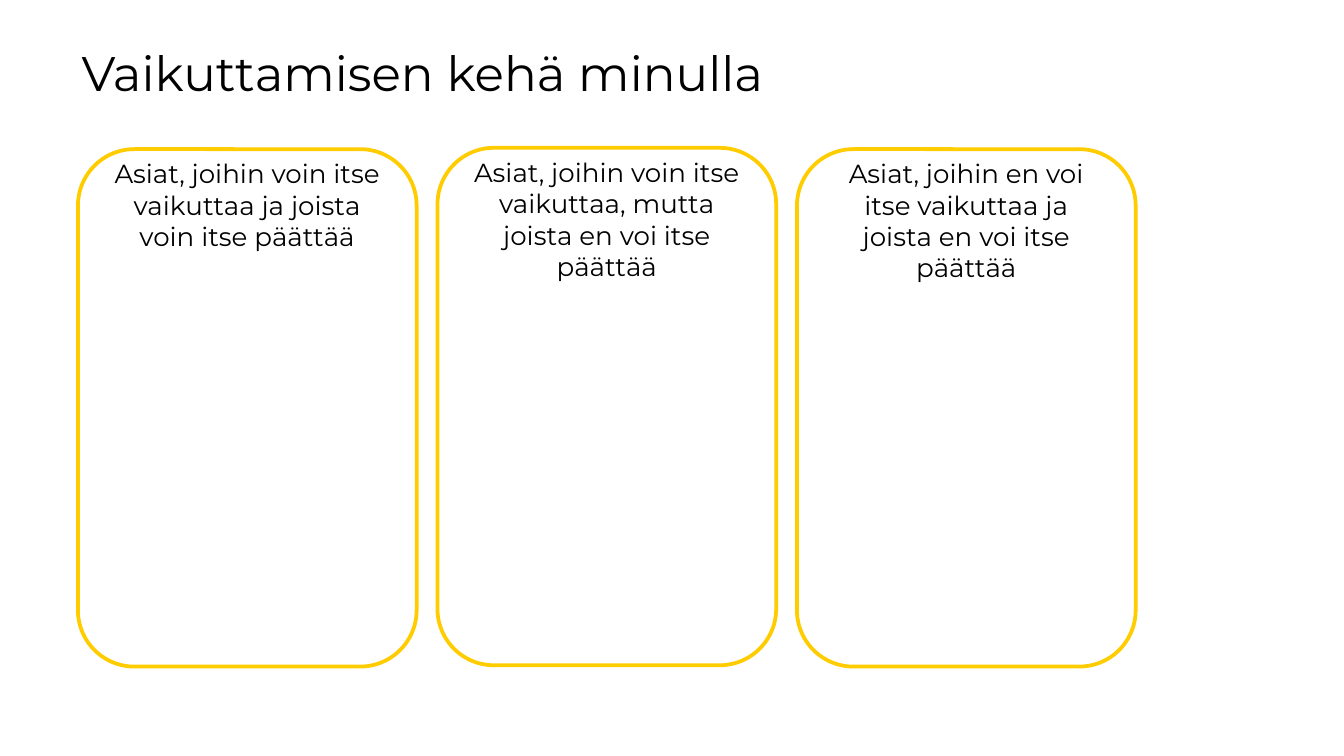
import pptx
import pptx.util
import pptx.dml.color
import pptx.enum.shapes
import pptx.enum.text

Inches = pptx.util.Inches
ALIGN = pptx.enum.text.PP_ALIGN
ANCHOR = pptx.enum.text.MSO_ANCHOR

BLACK = pptx.dml.color.RGBColor(0x00, 0x00, 0x00)
WHITE = pptx.dml.color.RGBColor(0xFF, 0xFF, 0xFF)
YELLOW = pptx.dml.color.RGBColor(0xFF, 0xCC, 0x00)

CARDS = [
    (1.11, "Asiat, joihin voin itse vaikuttaa ja joista voin itse päättää"),
    (1.1, "Asiat, joihin voin itse vaikuttaa, mutta joista en voi itse päättää"),
    (1.11, "Asiat, joihin en voi itse vaikuttaa ja joista en voi itse päättää"),
]
FIRST_LEFT, LAST_LEFT = 0.58, 5.93
CARD_STEP = (LAST_LEFT - FIRST_LEFT) / (len(CARDS) - 1)


def write_text(tf, text, *, size, align=ALIGN.LEFT, anchor=ANCHOR.TOP,
               top=0.1, bottom=0.1, font="Montserrat", color=BLACK):
    tf.word_wrap = True
    tf.vertical_anchor = anchor
    tf.margin_left = tf.margin_right = Inches(0.1)
    tf.margin_top = Inches(top)
    tf.margin_bottom = Inches(bottom)
    p = tf.paragraphs[0]
    p.alignment = align
    r = p.add_run()
    r.text = text
    r.font.name = font
    r.font.size = pptx.util.Pt(size)
    r.font.color.rgb = color


class SlideBuilder:
    title_size = 26
    card_size = 14
    line_width = 2

    def __init__(self, prs):
        self.s = prs.slides.add_slide(prs.slide_layouts[6])

    def title(self, text, left, top, width, height):
        sp = self.s.shapes.add_textbox(
            Inches(left), Inches(top), Inches(width), Inches(height))
        write_text(sp.text_frame, text, size=self.title_size,
                   anchor=ANCHOR.MIDDLE)

    def card(self, text, left, top, width, height):
        sp = self.s.shapes.add_shape(
            pptx.enum.shapes.MSO_SHAPE.ROUNDED_RECTANGLE,
            Inches(left), Inches(top), Inches(width), Inches(height))
        sp.shadow.inherit = False
        sp.fill.solid()
        sp.fill.fore_color.rgb = WHITE
        sp.line.color.rgb = YELLOW
        sp.line.width = pptx.util.Pt(self.line_width)
        write_text(sp.text_frame, text, size=self.card_size,
                   align=ALIGN.CENTER, top=-0.06, bottom=0.05)


def main():
    prs = pptx.Presentation()
    prs.slide_width = Inches(10)
    prs.slide_height = prs.slide_width * 9 // 16
    slide = SlideBuilder(prs)
    slide.title("Vaikuttamisen kehä minulla", 0.51, 0.15, 7.83, 0.77)
    for i, (top, text) in enumerate(CARDS):
        slide.card(text, FIRST_LEFT + i * CARD_STEP, top, 2.52, 3.85)
    prs.save("out.pptx")


if __name__ == "__main__":
    main()
